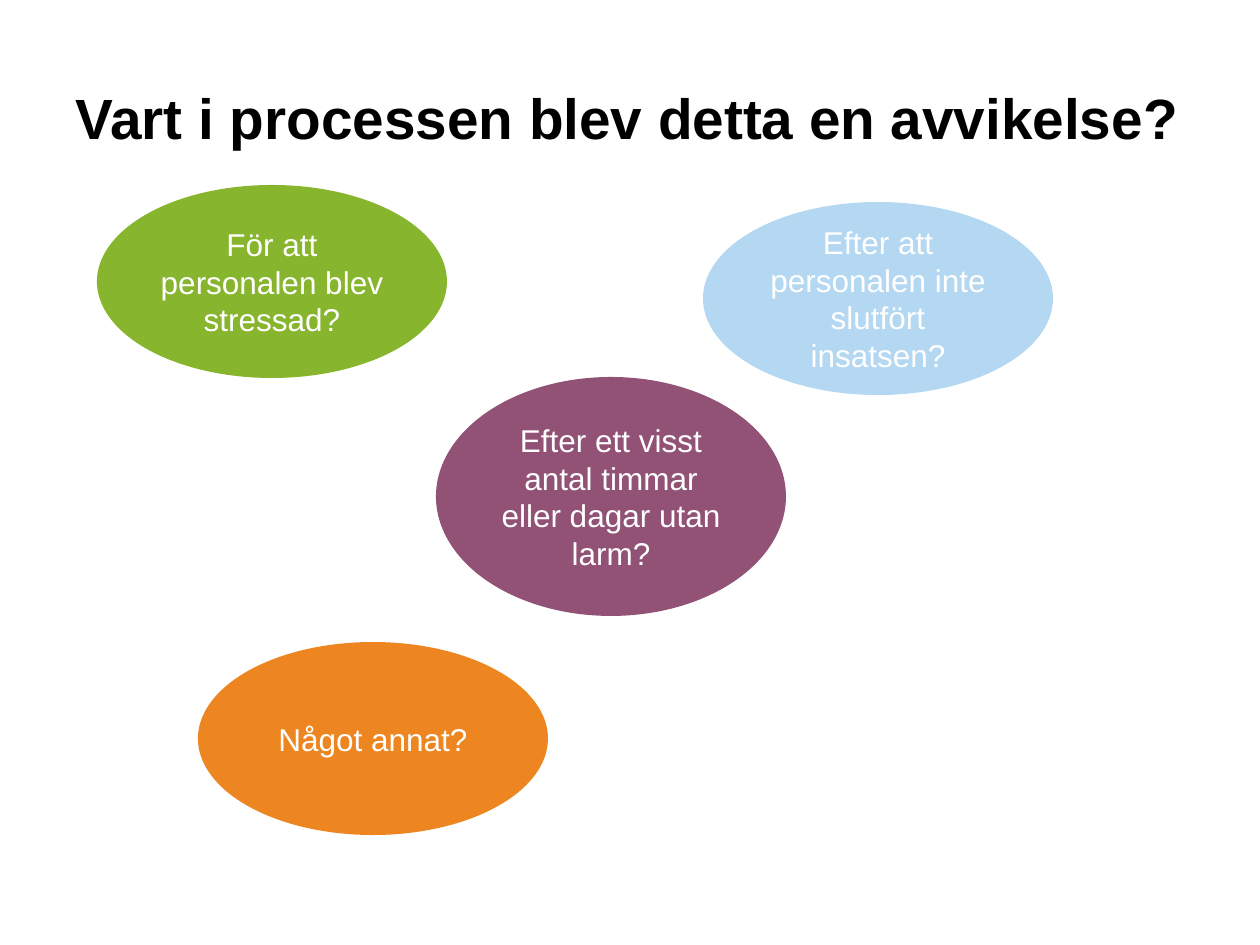
from pptx import Presentation
from pptx import util as u
from pptx.dml.color import RGBColor
from pptx.enum import shapes, text

PX_PER_INCH = 126
FONT = "Arial"
OVAL_WIDTH = 350
OVAL_HEIGHT = 193

# Answers: left, top, height, fill, wording
ANSWERS = [
    (436, 377, 239, "915276", "Efter ett visst antal timmar eller dagar utan larm?"),
    (198, 642, OVAL_HEIGHT, "ED8520", "Något annat?"),
    (97, 185, OVAL_HEIGHT, "87B52D", "För att personalen blev stressad?"),
    (703, 202, OVAL_HEIGHT, "B4D8F1", "Efter att personalen inte slutfört insatsen?"),
]


def px(length):
    return u.Inches(length / PX_PER_INCH)


def colour(code):
    return RGBColor.from_string(code)


def write(shape, wording, size, code, align, bold=False):
    frame = shape.text_frame
    frame.word_wrap = True
    frame.auto_size = text.MSO_AUTO_SIZE.NONE
    frame.vertical_anchor = text.MSO_ANCHOR.MIDDLE
    para = frame.paragraphs[0]
    para.alignment = align
    span = para.add_run()
    span.text = wording
    span.font.name = FONT
    span.font.size = u.Pt(size)
    span.font.bold = bold
    span.font.color.rgb = colour(code)


def add_title(page, wording):
    title = page.shapes.title
    title.left, title.top = px(63), px(38)
    title.width, title.height = px(1134), px(157)
    write(title, wording, 32.4, "000000", text.PP_ALIGN.LEFT, bold=True)


def add_answer(page, left, top, height, fill, wording):
    oval = page.shapes.add_shape(
        shapes.MSO_SHAPE.OVAL, px(left), px(top), px(OVAL_WIDTH), px(height))
    oval.shadow.inherit = False
    oval.fill.solid()
    oval.fill.fore_color.rgb = colour(fill)
    oval.line.fill.background()
    write(oval, wording, 18, "FFFFFF", text.PP_ALIGN.CENTER)


def main():
    deck = Presentation()
    deck.slide_width, deck.slide_height = px(1260), px(945)
    page = deck.slides.add_slide(deck.slide_layouts.get_by_name("Title Only"))

    # Question
    add_title(page, "Vart i processen blev detta en avvikelse?")

    # Possible answers
    for answer in ANSWERS:
        add_answer(page, *answer)

    deck.save("out.pptx")


if __name__ == "__main__":
    main()
